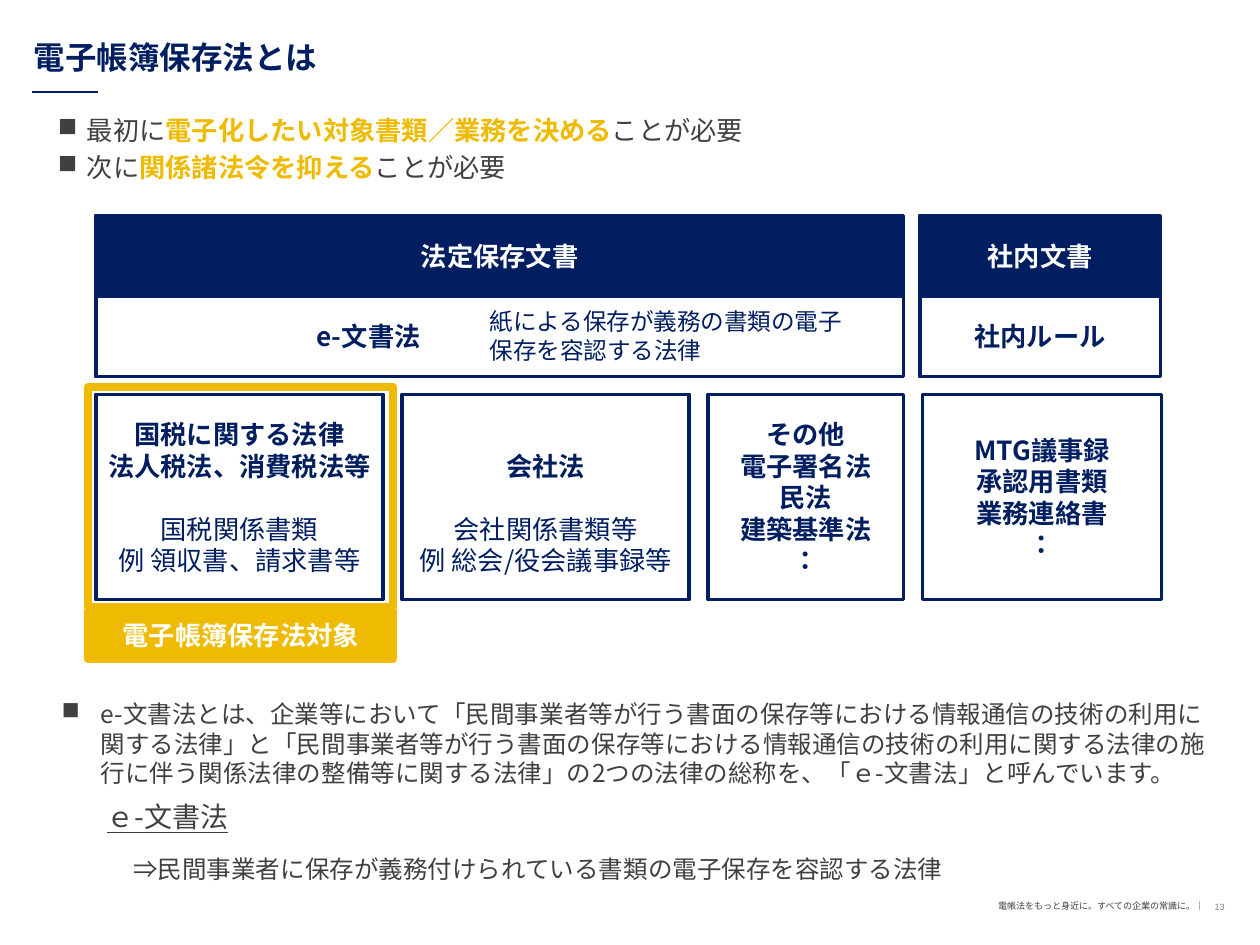
from dataclasses import dataclass

from lxml import etree
from pptx import Presentation
from pptx.dml.color import RGBColor
from pptx.enum.shapes import MSO_CONNECTOR, MSO_SHAPE
from pptx.enum.text import MSO_ANCHOR, PP_ALIGN
from pptx.oxml.ns import qn
from pptx.util import Inches, Pt

NAVY = RGBColor(0x00, 0x1E, 0x60)
GOLD = RGBColor(0xEE, 0xBB, 0x02)
GRAY = RGBColor(0x40, 0x40, 0x40)
PALE = RGBColor(0x80, 0x80, 0x80)
WHITE = RGBColor(0xFF, 0xFF, 0xFF)
FONT = "Noto Sans CJK JP"
LEFT, CENTER, RIGHT = PP_ALIGN.LEFT, PP_ALIGN.CENTER, PP_ALIGN.RIGHT
TOP, MIDDLE = MSO_ANCHOR.TOP, MSO_ANCHOR.MIDDLE
RECT, STRAIGHT = MSO_SHAPE.RECTANGLE, MSO_CONNECTOR.STRAIGHT
TIGHT = (0.07, 0.04, 0.07, 0.04)
WIDE = (0.1, 0.05, 0.1, 0.05)


@dataclass
class Run:
    text: str
    size: float = 15
    color: RGBColor = NAVY
    bold: bool = False
    underline: bool = False
    font: str = FONT


@dataclass
class Para:
    runs: list[Run]
    align: PP_ALIGN = LEFT
    spacing: float = 1
    before: float = 0
    indent: float = 0
    bullet: bool = False


@dataclass
class Box:
    at: tuple[float, float, float, float]
    paras: list[Para]
    fill: RGBColor | None = None
    line: RGBColor = NAVY
    width: float = 2
    insets: tuple[float, float, float, float] = TIGHT


@dataclass
class Label:
    at: tuple[float, float, float, float]
    paras: list[Para]
    insets: tuple[float, float, float, float] = WIDE
    anchor: MSO_ANCHOR = TOP


def centered(*lines: str, color: RGBColor = NAVY, bold: bool = True) -> list[Para]:
    return [Para([Run(line, color=color, bold=bold)], CENTER) for line in lines]


def documents(*lines: str) -> list[Para]:
    paras = centered(*lines, bold=False)
    paras[0].spacing = 2
    return paras


def add_bullet(p, indent: float) -> None:
    pPr = p._p.get_or_add_pPr()
    pPr.set("indent", str(-Inches(indent)))
    clr = etree.SubElement(pPr, qn("a:buClr"))
    etree.SubElement(clr, qn("a:srgbClr"), val=str(GRAY))
    etree.SubElement(pPr, qn("a:buChar"), char="■")


def add_run(p, run: Run) -> None:
    r = p.add_run()
    r.text = run.text
    formats = {"name": run.font, "size": Pt(run.size), "bold": run.bold, "underline": run.underline}
    for key, value in formats.items():
        setattr(r.font, key, value)
    r.font.color.rgb = run.color
    etree.SubElement(r._r.get_or_add_rPr(), qn("a:ea"), typeface=run.font)


def write(sp, paras: list[Para], insets, anchor: MSO_ANCHOR, wrap: bool) -> None:
    tf = sp.text_frame
    sides = ("margin_left", "margin_top", "margin_right", "margin_bottom")
    formats = dict(zip(sides, map(Inches, insets))) | {"vertical_anchor": anchor, "word_wrap": wrap}
    for key, value in formats.items():
        setattr(tf, key, value)
    for i, para in enumerate(paras):
        p = tf.add_paragraph() if i else tf.paragraphs[0]
        p.alignment = para.align
        p.line_spacing = para.spacing
        if para.before:
            p.space_before = Pt(para.before)
        if para.indent:
            p._p.get_or_add_pPr().set("marL", str(Inches(para.indent)))
        if para.bullet:
            add_bullet(p, para.indent)
        for run in para.runs:
            add_run(p, run)


def draw_box(s, box: Box) -> None:
    sp = s.shapes.add_shape(RECT, *map(Inches, box.at))
    sp.shadow.inherit = False
    if box.fill is None:
        sp.fill.background()
    else:
        sp.fill.solid()
        sp.fill.fore_color.rgb = box.fill
    sp.line.color.rgb = box.line
    sp.line.width = Pt(box.width)
    if box.paras:
        write(sp, box.paras, box.insets, MIDDLE, False)


def draw_label(s, label: Label) -> None:
    sp = s.shapes.add_textbox(*map(Inches, label.at))
    write(sp, label.paras, label.insets, label.anchor, True)


def draw_rule(s, x1: float, x2: float, y: float) -> None:
    c = s.shapes.add_connector(STRAIGHT, Inches(x1), Inches(y), Inches(x2), Inches(y))
    c.line.color.rgb = NAVY
    c.line.width = Pt(1)
    etree.SubElement(c._element.spPr, qn("a:effectLst"))


def point(before: str, key: str, gap: float = 0) -> Para:
    runs = [Run(before, color=GRAY), Run(key, color=GOLD, bold=True), Run("ことが必要", color=GRAY)]
    return Para(runs, before=gap, indent=0.23, bullet=True)


HEAD, RULE, LAW, ROW, LAW_H = 1.71, 2.35, 3.13, 0.64, 1.63
BOXES = [
    Box((0.76, HEAD, 6.41, ROW), centered("法定保存文書", color=WHITE), NAVY),
    Box((0.76, RULE, 6.41, ROW), centered("e-文書法"), insets=(0.07, 0.04, 2.15, 0.04)),
    Box((7.3, HEAD, 1.91, ROW), centered("社内文書", color=WHITE), NAVY),
    Box((7.3, RULE, 1.91, ROW), centered("社内ルール")),
    Box((0.76, LAW, 2.28, LAW_H), centered("国税に関する法律", "法人税法、消費税法等")
        + documents("国税関係書類", "例 領収書、請求書等")),
    Box((3.19, LAW, 2.28, LAW_H), centered("会社法")
        + documents("会社関係書類等", "例 総会/役会議事録等"), insets=(0.07, 0.29, 0.07, 0.04)),
    Box((5.62, LAW, 1.55, LAW_H), centered("その他", "電子署名法", "民法", "建築基準法", "：")),
    Box((7.32, LAW, 1.9, LAW_H), centered("MTG議事録", "承認用書類", "業務連絡書", "：")),
    Box((0.7, 3.07, 2.42, 1.75), [], None, GOLD, 4.5),
    Box((0.7, 4.85, 2.42, 0.38), centered("電子帳簿保存法対象", color=WHITE), GOLD, GOLD, 4.5),
]
LABELS = [
    Label((9.31, 7.08, 0.56, 0.24), [Para([Run("13", 5.2, PALE, font="Arial")], RIGHT)],
          (0, 0, 0.15, 0), MIDDLE),
    Label((7.76, 7.1, 1.9, 0.19),
          [Para([Run("電帳法をもっと身近に。すべての企業の常識に。｜", 5.2, GRAY)], RIGHT)]),
    Label((0.17, 0.25, 9.83, 0.49), [Para([Run("電子帳簿保存法とは", 18, bold=True)])]),
    Label((3.79, 2.39, 3.03, 0.76),
          [Para([Run("紙による保存が義務の書類の電子保存を容認する法律", 13.5)])]),
    Label((0.39, 0.87, 7.06, 0.84),
          [point("最初に", "電子化したい対象書類／業務を決める"),
           point("次に", "関係諸法令を抑える", 3)], TIGHT),
    Label((0.39, 5.5, 9.39, 1.07), [Para([Run(
        "e-文書法とは、企業等において「民間事業者等が行う書面の保存等における情報通信の技術の利用に関する法律」と"
        "「民間事業者等が行う書面の保存等における情報通信の技術の利用に関する法律の施行に伴う関係法律の整備等に関する法律」の"
        "2つの法律の総称を、「ｅ-文書法」と呼んでいます。", 14, GRAY)], indent=0.31, bullet=True)]),
    Label((0.7, 6.3, 9.2, 0.81),
          [Para([Run("ｅ-文書法", 16, GRAY, underline=True)], indent=0.05),
           Para([Run("⇒民間事業者に保存が義務付けられている書類の電子保存を容認する法律", 14, GRAY)],
                spacing=1.5, before=3, indent=0.26)]),
]


def main() -> None:
    prs = Presentation()
    prs.slide_width, prs.slide_height = Inches(10), Inches(7.5)
    s = prs.slides.add_slide(prs.slide_layouts[6])
    draw_rule(s, 0.25, 0.78, 0.73)
    for box in BOXES:
        draw_box(s, box)
    for label in LABELS:
        draw_label(s, label)
    prs.save("out.pptx")


if __name__ == "__main__":
    main()
